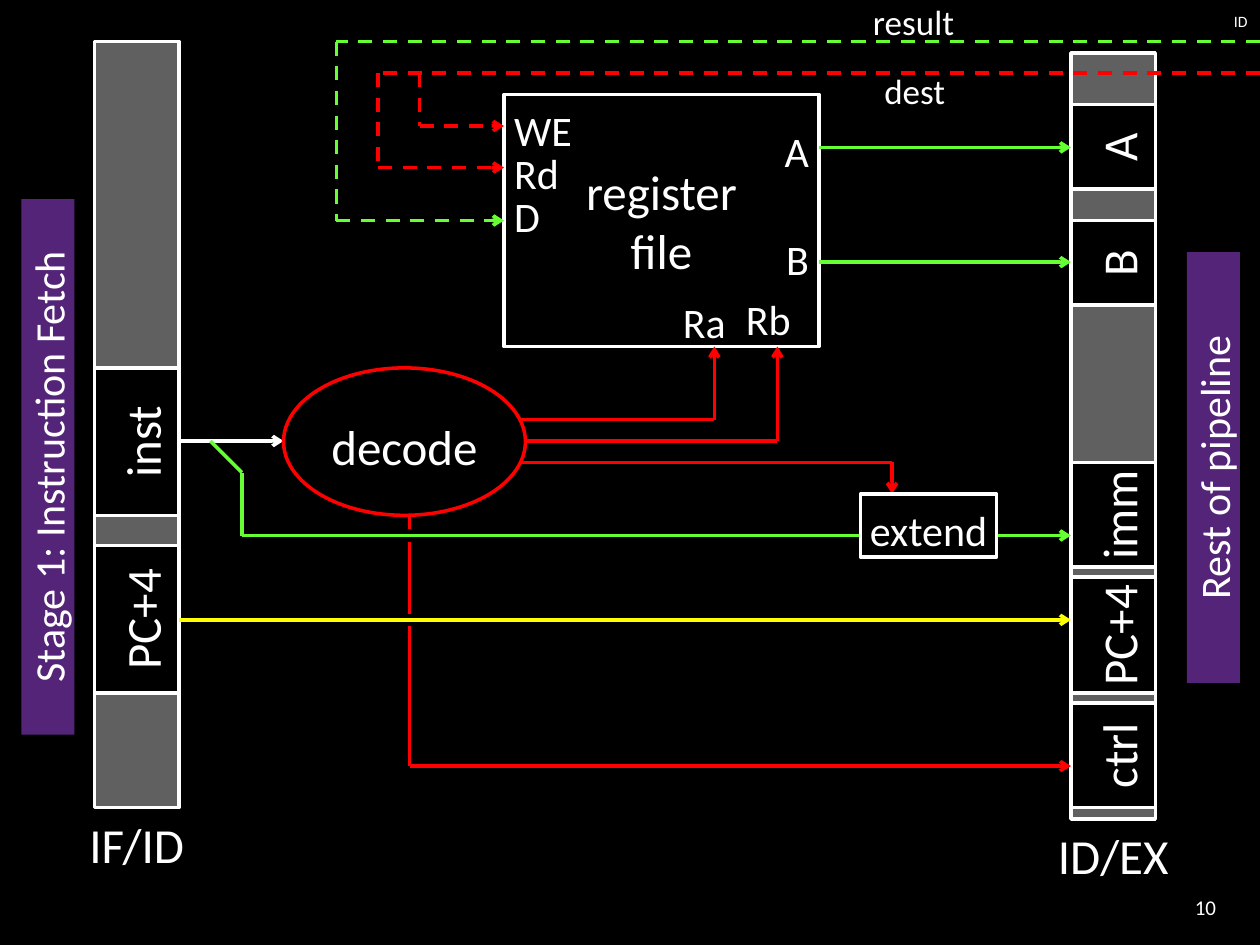
from lxml import etree
from pptx import Presentation
from pptx.dml.color import RGBColor
from pptx.enum import dml, shapes, text
from pptx.oxml.ns import qn
from pptx.util import Inches, Pt

BLACK = RGBColor(0x00, 0x00, 0x00)
WHITE = RGBColor(0xFF, 0xFF, 0xFF)
GRAY = RGBColor(0x60, 0x60, 0x60)
PURPLE = RGBColor(0x54, 0x24, 0x78)
RED = RGBColor(0xFF, 0x00, 0x00)
GREEN = RGBColor(0x66, 0xFF, 0x33)
YELLOW = RGBColor(0xFF, 0xFF, 0x00)
LEFT, CENTER, RIGHT = text.PP_ALIGN.LEFT, text.PP_ALIGN.CENTER, text.PP_ALIGN.RIGHT
RECT, OVAL = shapes.MSO_SHAPE.RECTANGLE, shapes.MSO_SHAPE.OVAL

prs = Presentation()
prs.slide_width, prs.slide_height = Inches(10), Inches(7.5)
s = prs.slides.add_slide(prs.slide_layouts[6])
s.background.fill.solid()
s.background.fill.fore_color.rgb = BLACK


def box(label, x, y, w, h, size=28, kind=None, fill=None, line=None,
        upright=False, align=CENTER, inset=None, spacing=None):
    """Text box, or a shape if kind is given; upright turns it to read upwards."""
    if upright:
        x, y, w, h = x + (w - h) / 2, y + (h - w) / 2, h, w
    place = [Inches(v) for v in (x, y, w, h)]
    if kind is None:
        sp = s.shapes.add_textbox(*place)
    else:
        sp = s.shapes.add_shape(kind, *place)
        sp.shadow.inherit = False
        if fill is None:
            sp.fill.background()
        else:
            sp.fill.solid()
            sp.fill.fore_color.rgb = fill
        if line is None:
            sp.line.fill.background()
        else:
            sp.line.color.rgb = line
            sp.line.width = Pt(2)
    sp.rotation = 270 if upright else 0
    if not label:
        return sp
    tf = sp.text_frame
    tf.word_wrap = True
    tf.vertical_anchor = text.MSO_ANCHOR.MIDDLE
    if inset is not None:
        tf.margin_left = tf.margin_right = tf.margin_top = tf.margin_bottom = Inches(inset)
    tf.text = label
    p = tf.paragraphs[0]
    p.alignment = align
    p.line_spacing = spacing
    for r in p.runs:
        r.font.size, r.font.name, r.font.color.rgb = Pt(size), "Calibri", WHITE
    return sp


def wire(color, points, arrow=True, dashed=False, width=2):
    """Straight connectors through the points, with an arrowhead at the last."""
    for i, (a, b) in enumerate(zip(points, points[1:]), 2):
        c = s.shapes.add_connector(shapes.MSO_CONNECTOR.STRAIGHT,
                                   *[Inches(v) for v in (*a, *b)])
        c.line.color.rgb = color
        c.line.width = Pt(width)
        if dashed:
            c.line.dash_style = dml.MSO_LINE.DASH
        if arrow and i == len(points):
            etree.SubElement(c.line._get_or_add_ln(), qn("a:tailEnd"), type="arrow")
        etree.SubElement(c._element.spPr, qn("a:effectLst"))


# Slide number and title
box("10", 8.92, 7, 0.83, 0.4, 12, align=RIGHT)
box("ID", 6.17, 0, 3.83, 0.33, 9, align=RIGHT)

# Neighbouring stages
for label, x, y, h in [("Stage 1: Instruction Fetch", 0.17, 1.58, 4.25),
                       ("Rest of pipeline", 9.42, 2, 3.42)]:
    box(label, x, y, 0.42, h, 24, RECT, PURPLE, upright=True)

# Pipeline registers and their fields: label, top, height, inset
registers = [
    ("IF/ID", 0.75, 0.33, 1, [("inst", 2.92, 1.17, None), ("PC+4", 4.33, 1.17, None)]),
    ("ID/EX", 8.5, 0.42, 1.17, [("A", 0.83, 0.67, None), ("B", 1.75, 0.67, None),
                                ("imm", 3.67, 0.83, 0), ("PC+4", 4.58, 0.92, 0),
                                ("ctrl", 5.58, 0.83, None)]),
]
for name, x, top, name_w, fields in registers:
    box("", x, top, 0.67, 6.08, kind=RECT, fill=GRAY, line=WHITE, upright=True)
    for label, y, h, inset in fields:
        box(label, x, y, 0.67, h, 28, RECT, BLACK, WHITE, upright=True,
            inset=inset, spacing=1.16)
    box(name, x + (0.67 - name_w) / 2, top + 6.08, name_w, 0.57)

# Register file and its ports
box("register\vfile", 4, 0.75, 2.5, 2, kind=RECT, line=WHITE)
for label, x, y, align in [("WE", 4.08, 0.83, LEFT), ("Rd", 4.08, 1.17, LEFT),
                           ("D", 4.08, 1.51, LEFT), ("Ra", 5.42, 2.35, LEFT),
                           ("Rb", 5.92, 2.33, LEFT), ("A", 5.92, 1, RIGHT),
                           ("B", 5.92, 1.85, RIGHT)]:
    box(label, x, y, 0.5, 0.4, 24, align=align, inset=0)

# Write-back wires
wire(RED, [(3.33, 0.58), (3.33, 1), (4, 1)], dashed=True)
wire(RED, [(10, 0.58), (3, 0.58), (3, 1.33), (4, 1.33)], dashed=True)
wire(GREEN, [(10, 0.33), (2.67, 0.33), (2.67, 1.75), (4, 1.75)], dashed=True)

# Control wire first, with gaps where the other wires cross it
wire(RED, [(3.25, 4.08), (3.25, 6.08), (8.5, 6.08)])
for y in (4.25, 4.92):
    wire(BLACK, [(3.08, y), (3.42, y)], arrow=False, width=7)

# Forward wires
wire(YELLOW, [(1.42, 4.92), (8.5, 4.92)])
for y in (1.17, 2.08):
    wire(GREEN, [(6.5, y), (8.5, y)])
wire(WHITE, [(1.42, 3.5), (2.25, 3.5)])
wire(GREEN, [(1.67, 3.5), (1.92, 3.75), (1.92, 4.25), (6.83, 4.25)], arrow=False)
wire(GREEN, [(7.92, 4.25), (8.5, 4.25)])
wire(RED, [(3.75, 3.33), (5.67, 3.33), (5.67, 2.75)])
wire(RED, [(3.92, 3.5), (6.17, 3.5), (6.17, 2.75)])
wire(RED, [(3.75, 3.67), (7.08, 3.67), (7.08, 3.92)])

# Logic blocks cover the wire ends
box("extend", 6.83, 3.92, 1.08, 0.5, 24, RECT, BLACK, WHITE, inset=0, spacing=1.16)
decode = box("decode", 2.25, 2.92, 1.92, 1.17, 28, OVAL, BLACK, RED, spacing=1.16)
decode.text_frame.word_wrap = False

# Wire names
box("result", 6.83, -0.05, 1.08, 0.44, 20, align=LEFT)
box("dest", 6.92, 0.5, 1.08, 0.44, 20, align=LEFT)

prs.save("out.pptx")
